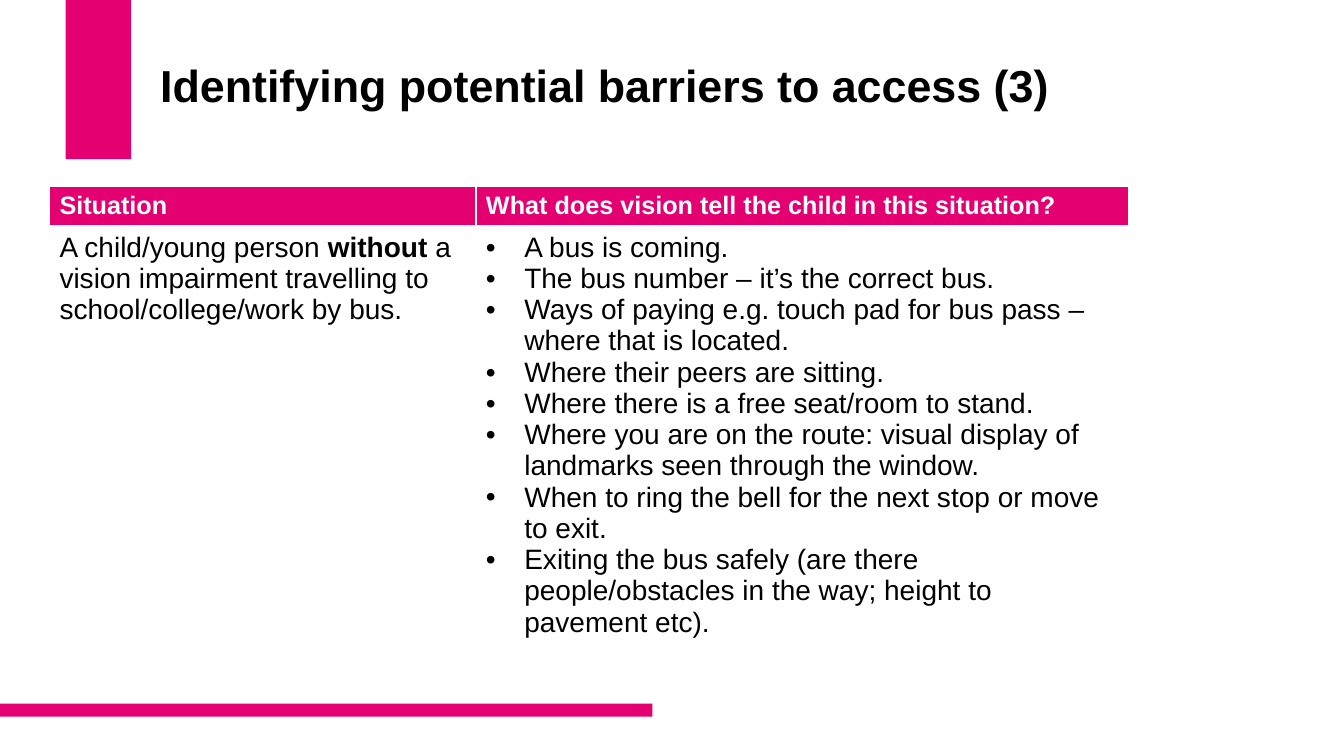
from dataclasses import dataclass

from lxml.etree import SubElement
from pptx import Presentation
from pptx.dml.color import RGBColor
from pptx.enum.shapes import MSO_SHAPE
from pptx.enum.text import MSO_ANCHOR
from pptx.oxml.ns import qn
from pptx.util import Inches, Pt

PINK, WHITE, BLACK = "E50071", "FFFFFF", "000000"
FONT = "Arial"


@dataclass
class Bar:
    left: float
    top: float
    width: float
    height: float


@dataclass
class Run:
    text: str
    bold: bool = False


BARS = [Bar(0.65, 0, 0.65, 1.58), Bar(0, 6.98, 6.47, 0.13)]
HEADERS = ["Situation", "What does vision tell the child in this situation?"]
SITUATION = [
    Run("A child/young person "),
    Run("without", bold=True),
    Run(" a vision impairment travelling to school/college/work by bus."),
]
VISION_CUES = [
    "A bus is coming.",
    "The bus number – it’s the correct bus.",
    "Ways of paying e.g. touch pad for bus pass – where that is located.",
    "Where their peers are sitting.",
    "Where there is a free seat/room to stand.",
    "Where you are on the route: visual display of landmarks seen through the window.",
    "When to ring the bell for the next stop or move to exit.",
    "Exiting the bus safely (are there people/obstacles in the way; height to pavement etc).",
]


def rgb(value: str) -> RGBColor:
    return RGBColor.from_string(value)


def set_font(font, size: float, color: str, bold: bool = False) -> None:
    font.name, font.size, font.bold = FONT, Pt(size), bold
    font.color.rgb = rgb(color)


def add_bar(slide, bar: Bar) -> None:
    s = slide.shapes.add_shape(MSO_SHAPE.RECTANGLE, Inches(bar.left), Inches(bar.top),
                               Inches(bar.width), Inches(bar.height))
    s.shadow.inherit = False
    s.fill.solid()
    s.fill.fore_color.rgb = rgb(PINK)
    s.line.fill.background()


def style_cell(cell, fill: str, bottom: float) -> None:
    """White borders, then the fill, in schema order."""
    tc_pr = cell._tc.get_or_add_tcPr()
    for side, width in (("L", 1), ("R", 1), ("T", 1), ("B", bottom)):
        ln = SubElement(tc_pr, qn(f"a:ln{side}"), w=str(Pt(width)))
        SubElement(SubElement(ln, qn("a:solidFill")), qn("a:srgbClr"), val=WHITE)
    cell.fill.solid()
    cell.fill.fore_color.rgb = rgb(fill)


def add_bullet(p) -> None:
    p_pr = p._p.get_or_add_pPr()
    p_pr.set("marL", str(Inches(0.38)))
    p_pr.set("indent", str(-Inches(0.38)))
    SubElement(p_pr, qn("a:buFont"), typeface=FONT)
    SubElement(p_pr, qn("a:buChar"), char="•")


prs = Presentation()
prs.slide_width, prs.slide_height = Inches(13.33), Inches(7.5)
slide = prs.slides.add_slide(prs.slide_layouts[6])

# Accent bars
for bar in BARS:
    add_bar(slide, bar)

# Title
tf = slide.shapes.add_textbox(Inches(1.49), Inches(0.4), Inches(9.6), Inches(1.45)).text_frame
tf.word_wrap = True
tf.vertical_anchor = MSO_ANCHOR.MIDDLE
tf.margin_bottom = Inches(0.55)
p = tf.paragraphs[0]
p.text = "Identifying potential barriers to access (3)"
p.line_spacing = 0.9
set_font(p.font, 32, BLACK, bold=True)

# Table grid
frame = slide.shapes.add_table(2, 2, Inches(0.49), Inches(1.85), Inches(10.7), Inches(4.83))
table = frame.table
for column, width in zip(table.columns, (4.23, 6.47)):
    column.width = Inches(width)
for row, height in zip(table.rows, (0.37, 4)):
    row.height = Inches(height)
frame.height = Inches(4.83)

# Header row
for cell, header in zip(table.rows[0].cells, HEADERS):
    style_cell(cell, PINK, bottom=3)
    p = cell.text_frame.paragraphs[0]
    p.text = header
    set_font(p.font, 18, WHITE, bold=True)

# Body row
situation, cues = table.rows[1].cells
for cell in (situation, cues):
    style_cell(cell, WHITE, bottom=1)

p = situation.text_frame.paragraphs[0]
for run in SITUATION:
    r = p.add_run()
    r.text = run.text
    set_font(r.font, 20, BLACK, run.bold)

tf = cues.text_frame
for i, cue in enumerate(VISION_CUES):
    p = tf.add_paragraph() if i else tf.paragraphs[0]
    p.text = cue
    add_bullet(p)
    set_font(p.font, 20, BLACK)

prs.save("out.pptx")
